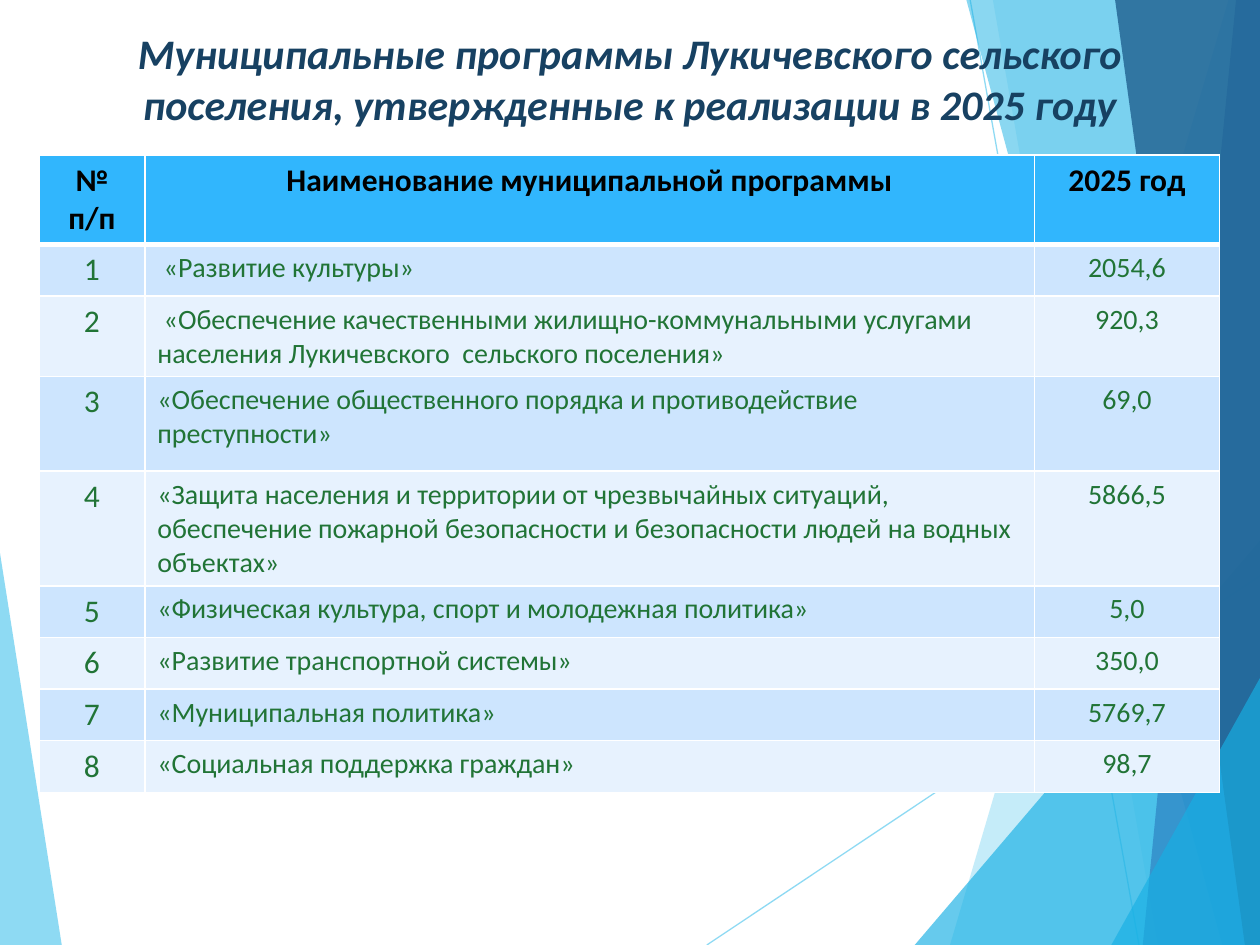
from pptx import Presentation
from pptx import util as u
from pptx.dml.color import RGBColor
from pptx.enum import shapes, text
from pptx.oxml import parse_xml
from pptx.oxml.ns import nsdecls, qn
from pptx.oxml.xmlchemy import OxmlElement

WIDTH, HEIGHT = 10, 7.5
SKY, AZURE, BLUE, NAVY = "5FCBEF", "17B0E4", "2E83C3", "226292"
HEADER, BAND_DARK, BAND_LIGHT = "31B6FD", "CDE5FE", "E7F2FE"
TITLE, GREEN, BLACK, WHITE = "174162", "217436", "000000", "FFFFFF"
CENTER, LEFT = text.PP_ALIGN.CENTER, text.PP_ALIGN.LEFT


def rgb(value):
    return RGBColor.from_string(value)


def set_opacity(shape, percent):
    for color in shape.element.spPr.iter(qn("a:srgbClr")):
        alpha = OxmlElement("a:alpha")
        alpha.set("val", str(percent * 1000))
        color.append(alpha)


class SlideBuilder:
    font = "Calibri"

    def __init__(self, slide):
        self.slide = slide

    def facet(self, points, color, opacity):
        corners = [(u.Inches(x), u.Inches(y)) for x, y in points]
        outline = self.slide.shapes.build_freeform(*corners[0])
        outline.add_line_segments(corners[1:], close=True)
        shape = outline.convert_to_shape()
        shape.shadow.inherit = False
        shape.fill.solid()
        shape.fill.fore_color.rgb = rgb(color)
        shape.line.fill.background()
        set_opacity(shape, opacity)

    def line(self, start, end, color, width, opacity):
        ends = [u.Inches(value) for value in (*start, *end)]
        line = self.slide.shapes.add_connector(shapes.MSO_CONNECTOR.STRAIGHT, *ends)
        line.line.color.rgb = rgb(color)
        line.line.width = u.Pt(width)
        set_opacity(line, opacity)
        line.element.spPr.append(OxmlElement("a:effectLst"))

    def add_text(self, frame, words, size, color, align, bold=False, italic=False):
        paragraph = frame.paragraphs[0]
        paragraph.alignment = align
        run = paragraph.add_run()
        run.text = words
        run.font.name = self.font
        run.font.size = u.Pt(size)
        run.font.color.rgb = rgb(color)
        run.font.bold = bold
        run.font.italic = italic

    def title(self, words, left, top, width, height):
        box = self.slide.shapes.add_textbox(*map(u.Inches, (left, top, width, height)))
        box.text_frame.word_wrap = True
        box.text_frame.vertical_anchor = text.MSO_ANCHOR.MIDDLE
        self.add_text(box.text_frame, words, 24, TITLE, CENTER, bold=True, italic=True)

    def border(self, cell, side, width):
        cell._tc.get_or_add_tcPr().append(parse_xml(
            f'<a:ln{side} {nsdecls("a")} w="{u.Pt(width)}"><a:solidFill>'
            f'<a:srgbClr val="{WHITE}"/></a:solidFill></a:ln{side}>'))

    def table(self, rows, left, top, widths, heights):
        frame = self.slide.shapes.add_table(
            len(rows), len(widths), u.Inches(left), u.Inches(top),
            u.Inches(sum(widths)), u.Inches(sum(heights)))
        table = frame.table
        for column, width in zip(table.columns, widths):
            column.width = u.Inches(width)
        for r, (row, height) in enumerate(zip(rows, heights)):
            table.rows[r].height = u.Inches(height)
            is_header = r == 0
            band = HEADER if is_header else (BAND_LIGHT, BAND_DARK)[r % 2]
            thick = {0: "B", 1: "T"}.get(r)
            for c, words in enumerate(row):
                cell = table.cell(r, c)
                for side in "LRTB":
                    self.border(cell, side, 3 if side == thick else 0.96)
                cell.fill.solid()
                cell.fill.fore_color.rgb = rgb(band)
                self.add_text(cell.text_frame, words,
                              18 if is_header or c == 0 else 16,
                              BLACK if is_header else GREEN,
                              LEFT if c == 1 and not is_header else CENTER,
                              bold=is_header)


def main():
    deck = Presentation()
    deck.slide_width, deck.slide_height = u.Inches(WIDTH), u.Inches(HEIGHT)
    page = SlideBuilder(deck.slides.add_slide(deck.slide_layouts[6]))

    # Background facets and thin lines
    page.facet([(0, 4.39), (0.49, HEIGHT), (0, HEIGHT)], SKY, 70)
    page.line((5.61, HEIGHT), (WIDTH, 4.57), SKY, 0.75, 70)
    page.line((7.7, 0), (9.04, HEIGHT), SKY, 0.75, 70)
    # Each facet runs from its left edge to the right side of the slide
    right_facets = [
        (9.75, 0, 7.54, SKY, 36),
        (7.88, 0, 9.19, SKY, 20),
        (WIDTH, 4.29, 7.26, AZURE, 66),
        (7.67, 0, 9.7, AZURE, 50),
        (9.81, 0, 9.07, BLUE, 70),
        (8.85, 0, 9.88, NAVY, 82),
        (WIDTH, 5.38, 8.82, AZURE, 66),
    ]
    for top_x, top_y, bottom_x, color, opacity in right_facets:
        points = [(top_x, top_y), (bottom_x, HEIGHT), (WIDTH, HEIGHT)]
        if top_x < WIDTH:
            points.append((WIDTH, top_y))
        page.facet(points, color, opacity)

    # Title
    page.title("Муниципальные программы Лукичевского сельского поселения, "
               "утвержденные к реализации в 2025 году", 0.5, 0.16, 9, 0.92)

    # Programmes and their funding
    programmes = [
        (" «Развитие культуры»", "2054,6"),
        (" «Обеспечение качественными жилищно-коммунальными услугами "
         "населения Лукичевского  сельского поселения»", "920,3"),
        ("«Обеспечение общественного порядка и противодействие преступности»", "69,0"),
        ("«Защита населения и территории от чрезвычайных ситуаций, обеспечение "
         "пожарной безопасности и безопасности людей на водных объектах»", "5866,5"),
        ("«Физическая культура, спорт и молодежная политика»", "5,0"),
        ("«Развитие транспортной системы»", "350,0"),
        ("«Муниципальная политика»", "5769,7"),
        ("«Социальная поддержка граждан»", "98,7"),
    ]
    rows = [("№ п/п", "Наименование муниципальной программы", "2025 год")]
    rows += [(str(n), name, amount) for n, (name, amount) in enumerate(programmes, 1)]
    heights = [0.71, 0.41, 0.64, 0.75, 0.91] + [0.41] * 4
    page.table(rows, 0.31, 1.23, [0.84, 7.06, 1.47], heights)

    deck.save("out.pptx")


if __name__ == "__main__":
    main()
